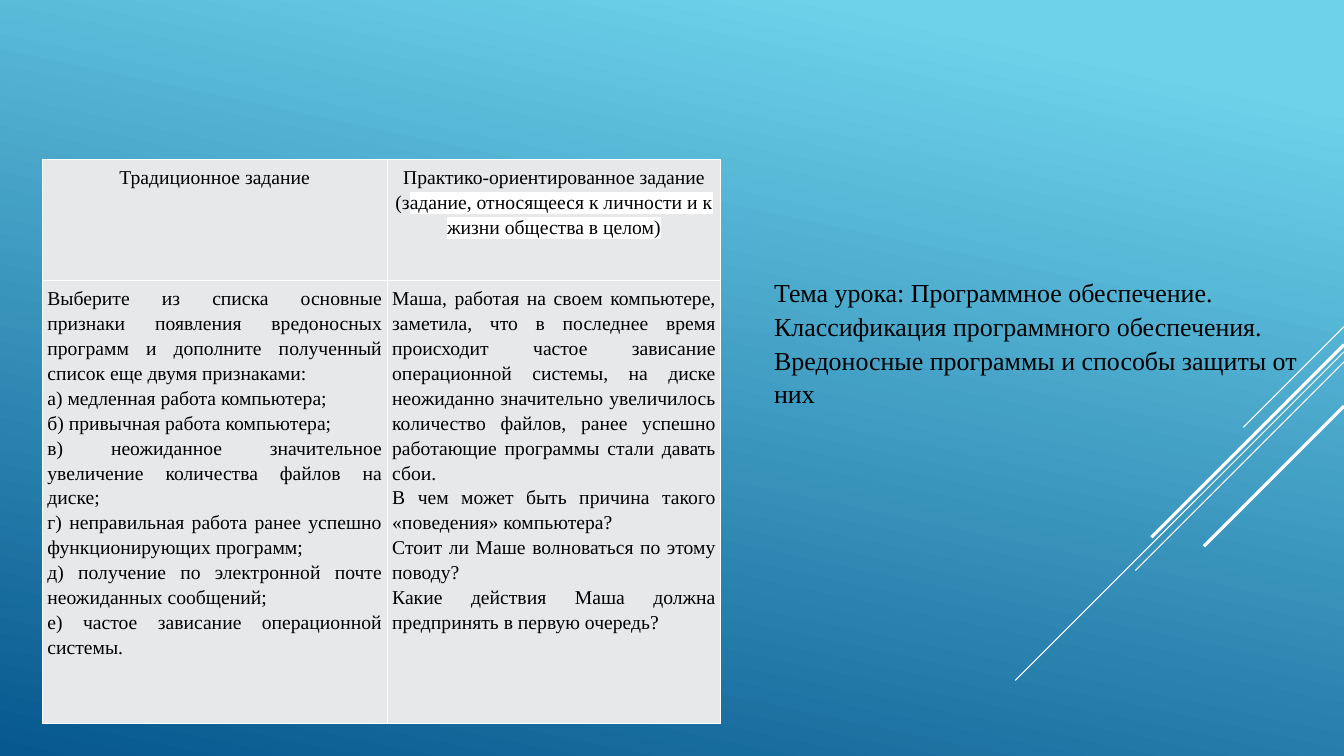
"""Build a slide comparing a traditional and a practice-oriented task."""
from lxml.etree import SubElement
from pptx import Presentation
from pptx.dml.color import RGBColor
from pptx.enum.shapes import MSO_CONNECTOR
from pptx.enum.text import MSO_ANCHOR, PP_ALIGN
from pptx.oxml import parse_xml
from pptx.oxml.ns import nsdecls, qn
from pptx.util import Inches, Pt

COLOURS = {
    "sky": "6ED2EB",
    "deep": "06588E",
    "white": "FFFFFF",
    "text": "000000",
    "cell": "E7E8EA",
}
FONT = "Times New Roman"
RIGHT_EDGE = 13.33

RAYS = [
    (3.24, 1.0, 0.75),
    (3.49, 3.26, 0.75),
    (3.59, 2.07, 0.75),
    (3.42, 1.91, 2.25),
    (4.03, 1.39, 2.25),
]
TOPIC = (
    "Тема урока: Программное обеспечение. Классификация программного "
    "обеспечения. Вредоносные программы и способы защиты от них"
)
HEADERS = [
    [("Традиционное задание", False)],
    [
        ("Практико-ориентированное задание (з", False),
        ("адание, относящееся к личности и к жизни общества в целом)", True),
    ],
]
TASKS = [
    [
        "Выберите из списка основные признаки появления вредоносных программ "
        "и дополните полученный список еще двумя признаками:",
        "а) медленная работа компьютера;",
        "б) привычная работа компьютера;",
        "в) неожиданное значительное увеличение количества файлов на диске;",
        "г) неправильная работа ранее успешно функционирующих программ;",
        "д) получение по электронной почте неожиданных сообщений;",
        "е) частое зависание операционной системы.",
    ],
    [
        "Маша, работая на своем компьютере, заметила, что в последнее время "
        "происходит частое зависание операционной системы, на диске неожиданно "
        "значительно увеличилось количество файлов, ранее успешно работающие "
        "программы стали давать сбои.",
        "В чем может быть причина такого «поведения» компьютера?",
        "Стоит ли Маше волноваться по этому поводу?",
        "Какие действия Маша должна предпринять в первую очередь?",
    ],
]
COLUMN_WIDTHS = [3.42, 3.31]
ROW_HEIGHTS = [1.2, 4.4]


def colour(name):
    return RGBColor.from_string(COLOURS[name])


def apply_format(target, values):
    for attribute, value in values.items():
        setattr(target, attribute, value)


def paint_background(slide):
    fill = slide.background.fill
    fill.gradient()
    fill.gradient_angle = 258
    for stop, (name, position) in zip(
        fill.gradient_stops, [("sky", 0.1), ("deep", 1.0)]
    ):
        stop.color.rgb = colour(name)
        stop.position = position


def add_ray(slide, top, reach, weight):
    ray = slide.shapes.add_connector(
        MSO_CONNECTOR.STRAIGHT,
        Inches(RIGHT_EDGE),
        Inches(top),
        Inches(RIGHT_EDGE - reach),
        Inches(top + reach),
    )
    ray.line.color.rgb = colour("white")
    ray.line.width = Pt(weight)
    SubElement(ray._element.spPr, qn("a:effectLst"))


def add_run(paragraph, text, size, highlighted=False):
    run = paragraph.add_run()
    run.text = text
    apply_format(run.font, {"name": FONT, "size": Pt(size), "bold": False})
    run.font.color.rgb = colour("text")
    if highlighted:
        highlight = parse_xml(
            f'<a:highlight {nsdecls("a")}>'
            f'<a:srgbClr val="{COLOURS["white"]}"/></a:highlight>'
        )
        run.font._element.find(qn("a:solidFill")).addnext(highlight)


def add_topic(slide):
    topic = slide.shapes.add_textbox(
        Inches(7.58), Inches(2.78), Inches(5.58), Inches(1.22)
    )
    frame = topic.text_frame
    apply_format(frame, {"word_wrap": True, "vertical_anchor": MSO_ANCHOR.MIDDLE})
    frame.paragraphs[0].line_spacing = 1.08
    add_run(frame.paragraphs[0], TOPIC, 18.5)


def style_cell(cell):
    margins = ("margin_left", "margin_right", "margin_top", "margin_bottom")
    apply_format(cell, dict.fromkeys(margins, Inches(0.05)))
    properties = cell._tc.get_or_add_tcPr()
    for side in ("lnL", "lnR", "lnT", "lnB"):
        properties.append(parse_xml(
            f'<a:{side} {nsdecls("a")} w="{Pt(1)}"><a:solidFill>'
            f'<a:srgbClr val="{COLOURS["white"]}"/></a:solidFill></a:{side}>'
        ))
    cell.fill.solid()
    cell.fill.fore_color.rgb = colour("cell")


def fill_cell(cell, paragraphs, alignment):
    style_cell(cell)
    frame = cell.text_frame
    for index, pieces in enumerate(paragraphs):
        paragraph = frame.add_paragraph() if index else frame.paragraphs[0]
        apply_format(paragraph, {"alignment": alignment, "line_spacing": 1.15})
        for text, highlighted in pieces:
            add_run(paragraph, text, 14, highlighted)


def add_task_table(slide):
    table = slide.shapes.add_table(
        len(ROW_HEIGHTS), len(COLUMN_WIDTHS), Inches(0.42), Inches(1.58),
        Inches(sum(COLUMN_WIDTHS)), Inches(sum(ROW_HEIGHTS)),
    ).table
    apply_format(table, {"first_row": False, "horz_banding": False})
    for row, height in zip(table.rows, ROW_HEIGHTS):
        row.height = Inches(height)
    for index, width in enumerate(COLUMN_WIDTHS):
        table.columns[index].width = Inches(width)
        fill_cell(table.cell(0, index), [HEADERS[index]], PP_ALIGN.CENTER)
        task = [[(text, False)] for text in TASKS[index]]
        fill_cell(table.cell(1, index), task, PP_ALIGN.JUSTIFY)


def main():
    presentation = Presentation()
    apply_format(
        presentation,
        {"slide_width": Inches(RIGHT_EDGE), "slide_height": Inches(7.5)},
    )
    slide = presentation.slides.add_slide(presentation.slide_layouts[6])
    paint_background(slide)
    for ray in RAYS:
        add_ray(slide, *ray)
    add_topic(slide)
    add_task_table(slide)
    presentation.save("out.pptx")


if __name__ == "__main__":
    main()
